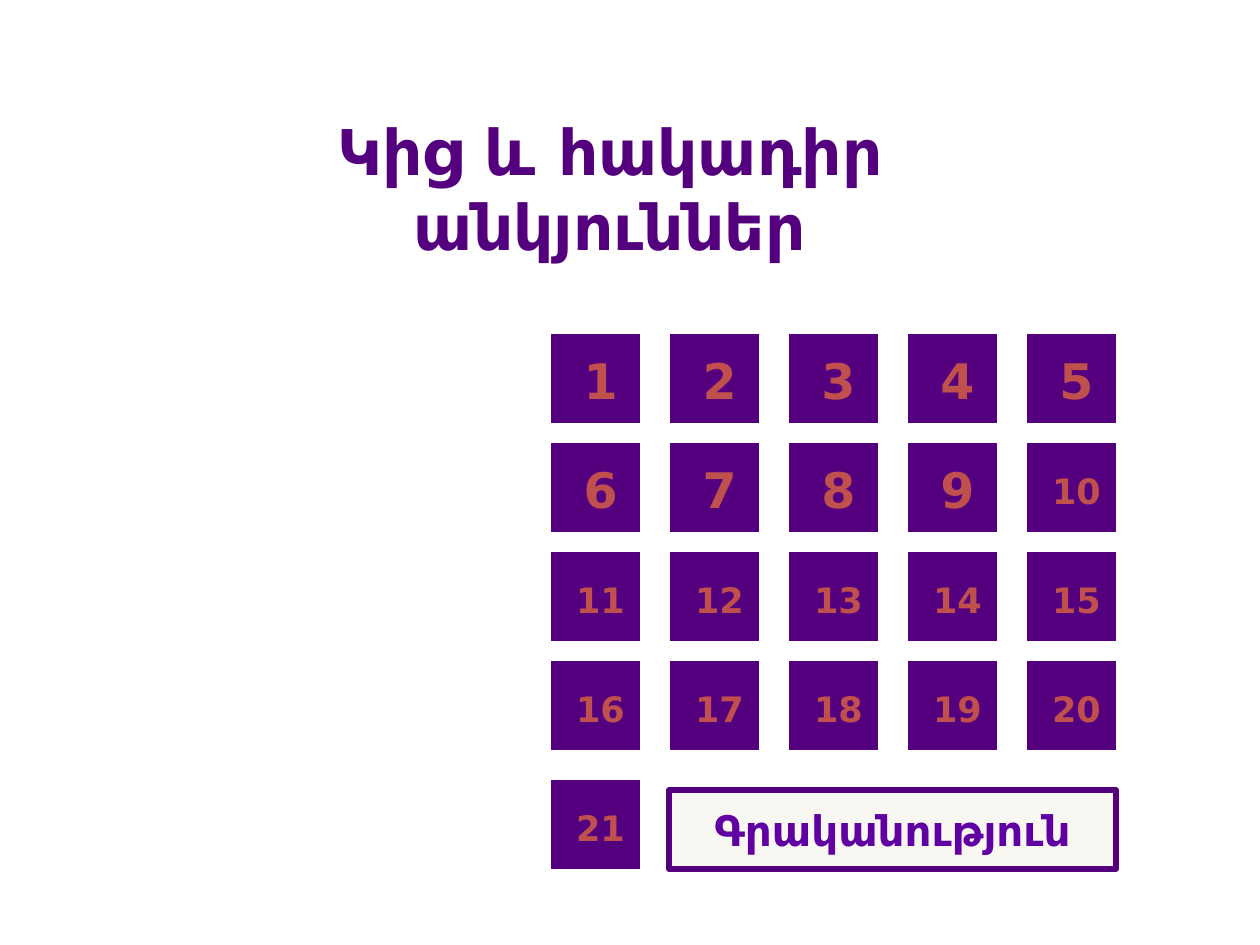
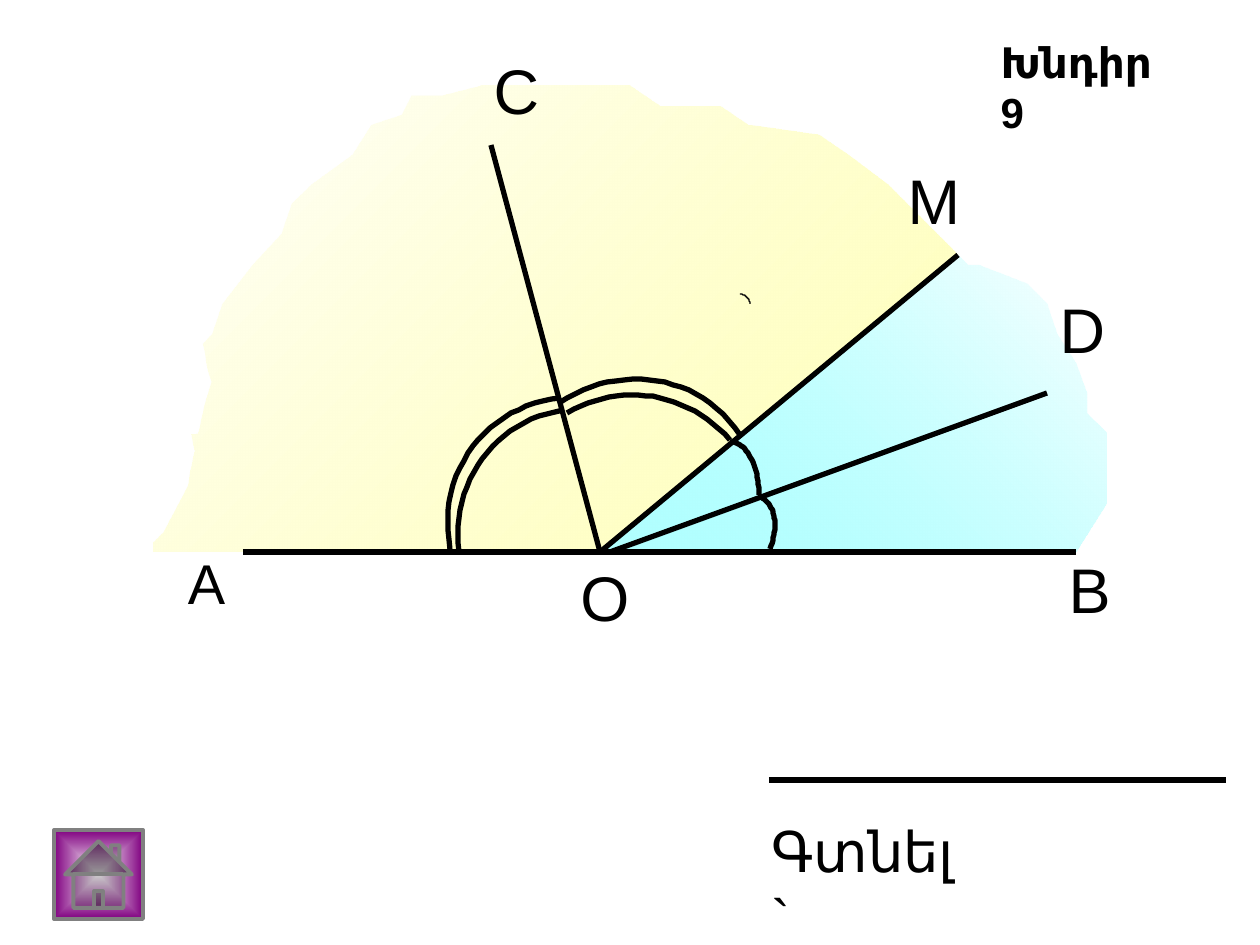
from lxml import etree
from pptx import Presentation
from pptx.dml.color import RGBColor
from pptx.enum.shapes import MSO_CONNECTOR, MSO_SHAPE
from pptx.enum.text import MSO_ANCHOR, MSO_AUTO_SIZE, PP_ALIGN
from pptx.oxml.ns import qn
from pptx.util import Pt

STRAIGHT = MSO_CONNECTOR.STRAIGHT
BLANK_BUTTON = MSO_SHAPE.ACTION_BUTTON_CUSTOM
HOME_BUTTON = MSO_SHAPE.ACTION_BUTTON_HOME
LEFT, CENTER = PP_ALIGN.LEFT, PP_ALIGN.CENTER
TOP, MIDDLE = MSO_ANCHOR.TOP, MSO_ANCHOR.MIDDLE
NO_FIT = MSO_AUTO_SIZE.NONE

EMU_PER_PX = 914400 / 126
TITLE_ONLY = 5
MENU_FONT, FIGURE_FONT = "DejaVu Sans", "Arial"
COLORS = {
    "violet": "54007E",
    "violet_text": "6000A2",
    "red": "C0504D",
    "cream": "EEECE1",
    "black": "000000",
    "white": "FFFFFF",
    "cyan": "66FFFF",
    "yellow": "FFFF99",
    "purple": "800080",
    "gray": "808080",
}

BUTTON_SIZE, BUTTON_COLUMNS = 89, 5
GRID_LEFT, GRID_TOP, STEP_X, STEP_Y = 551, 334, 119, 109
LAST_ROW, LAST_ROW_GAP = 4, 10

VERTEX, RAY_M_END = (600, 552), (958, 255)
RAYS = [
    ((610, 552), (1047, 393)),
    (VERTEX, RAY_M_END),
    ((243, 552), (1076, 552)),
    (VERTEX, (491, 145)),
]
BLUE_SECTOR = [
    RAY_M_END, VERTEX, (1076, 552), (1107, 503), (1107, 433), (1087, 413),
    (1087, 393), (1076, 363), (1057, 334), (1047, 304), (1027, 284),
    (978, 265), (968, 265),
]
YELLOW_SECTOR = [
    (154, 552), VERTEX, RAY_M_END, (888, 185), (848, 155), (819, 135),
    (748, 125), (720, 106), (660, 106), (630, 86), (481, 86), (441, 96),
    (412, 96), (402, 115), (372, 125), (353, 155), (312, 185), (292, 204),
    (282, 234), (253, 265), (223, 304), (213, 334), (203, 344), (205, 349),
    (208, 370), (212, 382), (205, 406), (199, 433), (192, 434), (195, 451),
    (190, 475), (189, 485), (183, 496), (164, 532), (154, 542),
]
ANGLE_ARCS = [
    ((730, 442), (746, 442), (759, 465), (759, 495)),
    ((762, 498), (775, 505), (779, 527), (770, 549)),
    ((559, 403), (620, 362), (700, 374), (740, 435)),
    ((450, 549), (436, 470), (488, 405), (561, 398)),
    ((459, 552), (449, 483), (496, 420), (563, 410)),
    ((567, 413), (620, 381), (689, 392), (730, 440)),
]
SMALL_ARC = ((740, 294), (745, 294), (750, 299), (750, 304))
POINT_LABELS = [
    ("А", (175, 542, 63, 79), 32),
    ("В", (1056, 544, 67, 88), 36),
    ("С", (481, 45, 71, 88), 36),
    ("D", (1047, 284, 71, 88), 36),
    ("М", (895, 155, 78, 88), 36),
    ("О", (568, 552, 74, 88), 36),
]


def emu(*lengths):
    return [round(length * EMU_PER_PX) for length in lengths]


def rgb(name):
    return RGBColor.from_string(COLORS[name])


def set_line(line, color, width):
    line.color.rgb = rgb(color)
    line.width = Pt(width)


def set_alpha(fill_parent, color, percent):
    for element in fill_parent.iter(qn("a:srgbClr")):
        if element.get("val") == COLORS[color]:
            etree.SubElement(element, qn("a:alpha"), val=str(percent * 1000))


def set_gradient(shape, start, end, angle=0):
    shape.fill.gradient()
    shape.fill.gradient_angle = angle
    for stop, color in zip(shape.fill.gradient_stops, (start, end)):
        stop.color.rgb = rgb(color)


def write(box, text, size, color, font, bold=False, align=CENTER,
          wrap=False, anchor=TOP):
    frame = box.text_frame
    frame.text = text
    frame.word_wrap = wrap
    frame.auto_size = NO_FIT
    frame.vertical_anchor = anchor
    para = frame.paragraphs[0]
    para.alignment = align
    span = para.runs[0].font
    span.name, span.size, span.bold = font, Pt(size), bold
    span.color.rgb = rgb(color)


def add_label(shapes, text, place, *style, **options):
    write(shapes.add_textbox(*emu(*place)), text, *style, **options)


def add_page(deck, title, place, *style, **options):
    page = deck.slides.add_slide(deck.slide_layouts[TITLE_ONLY])
    box = page.shapes.title
    box.left, box.top, box.width, box.height = emu(*place)
    write(box, title, *style, **options)
    return page


def add_preset(shapes, kind, place):
    shape = shapes.add_shape(kind, *emu(*place))
    shape.shadow.inherit = False
    return shape


def add_number_button(page, number):
    row, column = divmod(number - 1, BUTTON_COLUMNS)
    left = GRID_LEFT + column * STEP_X
    top = GRID_TOP + row * STEP_Y + (LAST_ROW_GAP if row == LAST_ROW else 0)
    shapes = page.shapes.add_group_shape().shapes
    button = add_preset(shapes, BLANK_BUTTON, (left, top, BUTTON_SIZE, BUTTON_SIZE))
    button.fill.solid()
    button.fill.fore_color.rgb = rgb("violet")
    button.line.fill.background()
    if number < 10:
        place, size = (left + 20, top + 10, 59, 72), 28
    else:
        place, size = (left + 10, top + 20, 79, 54), 20
    add_label(shapes, str(number), place, size, "red", MENU_FONT, bold=True)


def add_literature_button(page):
    button = add_preset(page.shapes, BLANK_BUTTON, (669, 790, 447, 79))
    button.fill.solid()
    button.fill.fore_color.rgb = rgb("cream")
    set_alpha(button._element.spPr, "cream", 41)
    set_line(button.line, "violet", 3)
    write(button, "Գրականություն", 24, "violet_text", MENU_FONT, bold=True, anchor=MIDDLE)


def add_outline(page, points, close):
    builder = page.shapes.build_freeform(*points[0], scale=EMU_PER_PX)
    builder.add_line_segments(points[1:], close=close)
    shape = builder.convert_to_shape()
    shape.shadow.inherit = False
    return shape


def add_sector(page, points, start, end, angle, clear_color, alpha):
    sector = add_outline(page, points, True)
    set_gradient(sector, start, end, angle)
    set_alpha(sector._element.spPr, clear_color, alpha)
    sector.line.fill.background()


def curve_points(start, pull_start, pull_end, end, steps=24):
    points = []
    for step in range(steps + 1):
        t = step / steps
        weights = ((1 - t) ** 3, 3 * t * (1 - t) ** 2, 3 * t * t * (1 - t), t ** 3)
        corners = (start, pull_start, pull_end, end)
        points.append(tuple(
            sum(weight * corner[axis] for weight, corner in zip(weights, corners))
            for axis in (0, 1)
        ))
    return points


def add_arc(page, curve, width):
    arc = add_outline(page, curve_points(*curve), False)
    arc.fill.background()
    set_line(arc.line, "black", width)


def add_line(page, start, end):
    line = page.shapes.add_connector(STRAIGHT, *emu(*start, *end))
    set_line(line.line, "black", 3)
    etree.SubElement(line._element.spPr, qn("a:effectLst"))


def add_home_button(page):
    button = add_preset(page.shapes, HOME_BUTTON, (54, 830, 89, 89))
    set_gradient(button, "white", "purple")
    direction = button._element.spPr.find(".//" + qn("a:lin"))
    center = etree.Element(qn("a:path"), attrib={"path": "rect"})
    sides = dict.fromkeys("ltrb", "50000")
    etree.SubElement(center, qn("a:fillToRect"), attrib=sides)
    direction.getparent().replace(direction, center)
    set_line(button.line, "gray", 2.25)


def build_menu(deck):
    page = add_page(deck, "Կից և հակադիր անկյուններ", (154, 106, 912, 198),
                    36, "violet", MENU_FONT, bold=True)
    for number in range(1, 22):
        add_number_button(page, number)
    add_literature_button(page)


def build_problem(deck):
    page = add_page(deck, "Խնդիր 9", (988, 30, 189, 64), 24, "black",
                    FIGURE_FONT, bold=True, align=LEFT, wrap=True)
    add_sector(page, BLUE_SECTOR, "cyan", "white", 45, "cyan", 51)
    add_sector(page, YELLOW_SECTOR, "white", "yellow", 315, "yellow", 67)
    for start, end in RAYS:
        add_line(page, start, end)
    for text, place, size in POINT_LABELS:
        add_label(page.shapes, text, place, size, "black", FIGURE_FONT)
    for curve in ANGLE_ARCS:
        add_arc(page, curve, 3)
    add_arc(page, SMALL_ARC, 0.75)
    add_line(page, (769, 780), (1226, 780))
    add_label(page.shapes, "Գտնել`", (759, 810, 212, 81), 32, "black",
              FIGURE_FONT, align=LEFT, wrap=True)
    add_home_button(page)


def main():
    deck = Presentation()
    deck.slide_width, deck.slide_height = emu(1260, 945)
    build_menu(deck)
    build_problem(deck)
    deck.save("out.pptx")


if __name__ == "__main__":
    main()
